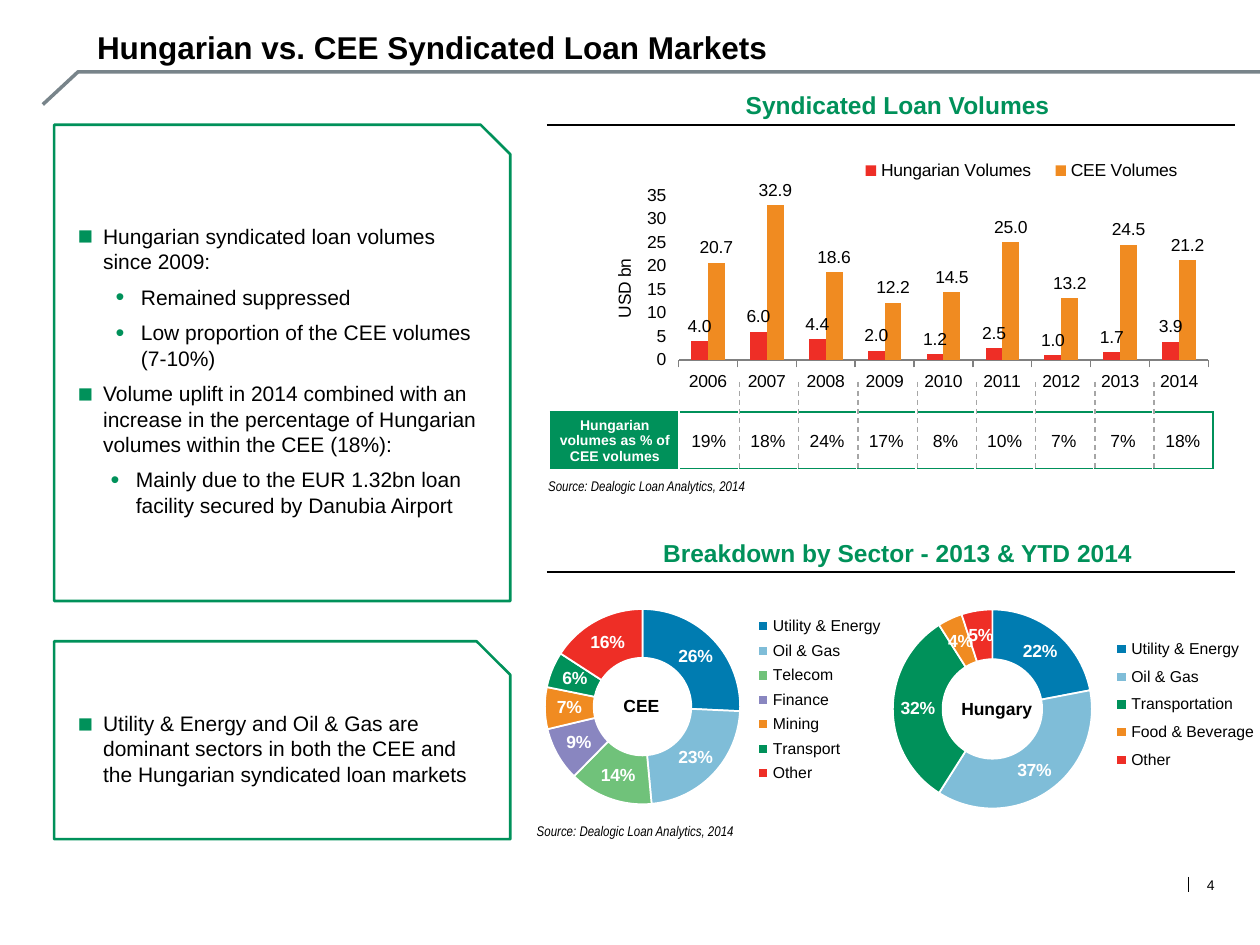
from dataclasses import dataclass

from lxml.etree import SubElement
from pptx import Presentation
from pptx.chart.data import CategoryChartData
from pptx.dml.color import RGBColor
from pptx.enum.chart import XL_CHART_TYPE as ChartType
from pptx.enum.chart import XL_LABEL_POSITION as LabelPosition
from pptx.enum.chart import XL_LEGEND_POSITION as LegendPosition
from pptx.enum.chart import XL_TICK_MARK as TickMark
from pptx.enum.dml import MSO_LINE
from pptx.enum.shapes import MSO_CONNECTOR, MSO_SHAPE
from pptx.enum.text import MSO_ANCHOR, PP_ALIGN
from pptx.oxml import parse_xml
from pptx.oxml.ns import nsdecls, qn
from pptx.util import Inches, Pt

GREEN, BLACK, WHITE = "00915A", "000000", "FFFFFF"
RED, ORANGE, BLUE, SKY = "EE2E26", "F08B21", "007CB1", "7FBDD8"
SOURCE = "Source: Dealogic Loan Analytics, 2014"
Box = tuple[float, float, float, float]


@dataclass
class Bullet:
    text: str
    left: float = 0.29
    mark: str = "■"
    level: int = 1


@dataclass
class Doughnut:
    name: str
    box: Box
    plot: Box
    legend: Box
    name_box: Box
    sectors: list[tuple[str, int, str]]


def color(value: str) -> RGBColor:
    return RGBColor.from_string(value)


def set_font(font, size: float, value: str = BLACK, bold=False, italic=False, name="Arial") -> None:
    font.size, font.bold, font.italic, font.name = Pt(size), bold, italic, name
    font.color.rgb = color(value)


def set_frame(frame, margins: Box = (0, 0, 0, 0), anchor=MSO_ANCHOR.TOP) -> None:
    frame.word_wrap = True
    frame.vertical_anchor = anchor
    (frame.margin_left, frame.margin_top,
     frame.margin_right, frame.margin_bottom) = map(Inches, margins)


def add_run(paragraph, text: str, size: float, value: str = BLACK, align=PP_ALIGN.LEFT, **style) -> None:
    paragraph.alignment = align
    run = paragraph.add_run()
    run.text = text
    set_font(run.font, size, value, **style)


def add_text(slide, box: Box, text: str, size: float, value: str = BLACK, align=PP_ALIGN.LEFT,
             margins: Box = (0, 0, 0, 0), anchor=MSO_ANCHOR.TOP, **style):
    shape = slide.shapes.add_textbox(*map(Inches, box))
    set_frame(shape.text_frame, margins, anchor)
    paragraph = shape.text_frame.paragraphs[0]
    add_run(paragraph, text, size, value, align, **style)
    return paragraph


def add_line(slide, start: tuple[float, float], end: tuple[float, float],
             value: str = BLACK, width: float = 1, dash=None) -> None:
    line = slide.shapes.add_connector(MSO_CONNECTOR.STRAIGHT, *map(Inches, start + end))
    line.line.color.rgb, line.line.width = color(value), Pt(width)
    if dash:
        line.line.dash_style = dash
    SubElement(line._element.spPr, qn("a:effectLst"))


def add_heading(slide, top: float, text: str) -> None:
    paragraph = add_text(slide, (4.34, top, 5.47, 0.31), text, 14, GREEN, PP_ALIGN.CENTER,
                         (0, 0.02, 0, 0.02), MSO_ANCHOR.MIDDLE, bold=True)
    paragraph._p.get_or_add_pPr().set("indent", str(Inches(0.1)))
    add_line(slide, (4.34, top + 0.31), (9.8, top + 0.31))


def add_panel(slide, box: Box, snip: float, bullets: list[Bullet]) -> None:
    panel = slide.shapes.add_shape(MSO_SHAPE.SNIP_1_RECTANGLE, *map(Inches, box))
    panel.shadow.inherit = False
    panel.adjustments[0] = snip
    panel.fill.solid()
    panel.fill.fore_color.rgb = color(WHITE)
    panel.line.color.rgb, panel.line.width = color(GREEN), Pt(1.5)
    frame = panel.text_frame
    set_frame(frame, (0.1, 0.05, 0.1, 0.05), MSO_ANCHOR.MIDDLE)
    for index, bullet in enumerate(bullets):
        paragraph = frame.add_paragraph() if index else frame.paragraphs[0]
        paragraph.level = bullet.level
        properties = paragraph._p.get_or_add_pPr()
        properties.set("marL", str(Inches(bullet.left)))
        properties.set("indent", str(Inches(-0.2)))
        SubElement(SubElement(properties, qn("a:buClr")), qn("a:srgbClr"), val=GREEN)
        SubElement(properties, qn("a:buSzPct"), val="120000")
        SubElement(properties, qn("a:buFont"), typeface="Arial")
        SubElement(properties, qn("a:buChar"), char=bullet.mark)
        paragraph.space_after = Pt(6)
        add_run(paragraph, bullet.text, 12)


def manual_layout(box: Box, inner: bool):
    target = '<c:layoutTarget val="inner"/>' if inner else ""
    modes = "".join(f'<c:{axis}Mode val="edge"/>' for axis in "xy")
    sizes = "".join(f'<c:{key} val="{value}"/>' for key, value in zip("xywh", box))
    return parse_xml(f'<c:layout {nsdecls("c")}><c:manualLayout>{target}{modes}{sizes}'
                     "</c:manualLayout></c:layout>")


def add_chart(slide, kind, box: Box, data, size: float, position, plot: Box, legend: Box):
    chart = slide.shapes.add_chart(kind, *map(Inches, box), data).chart
    set_font(chart.font, size)
    chart.has_title = False
    chart.has_legend = True
    chart.legend.position = position
    chart.legend.include_in_layout = False
    set_font(chart.legend.font, size)
    area = chart._chartSpace.chart.plotArea
    for layout in area.findall(qn("c:layout")):
        area.remove(layout)
    area.insert(0, manual_layout(plot, True))
    legend_element = chart.legend._element
    for layout in legend_element.findall(qn("c:layout")):
        legend_element.remove(layout)
    legend_element.find(qn("c:legendPos")).addnext(manual_layout(legend, False))
    return chart


def add_volume_chart(slide) -> None:
    data = CategoryChartData(number_format="0.0")
    data.categories = [str(year) for year in range(2006, 2015)]
    data.add_series("Hungarian Volumes", [4.0, 6.0, 4.4, 2.0, 1.2, 2.5, 1.0, 1.7, 3.9])
    data.add_series("CEE Volumes", [20.7, 32.9, 18.6, 12.2, 14.5, 25.0, 13.2, 24.5, 21.2])
    chart = add_chart(slide, ChartType.COLUMN_CLUSTERED, (4.84, 1.14, 4.95, 1.97), data, 10,
                      LegendPosition.TOP, (0.11, 0.21, 0.85, 0.67), (0.38, 0.06, 0.56, 0.1))
    plot = chart.plots[0]
    plot.gap_width, plot.overlap, plot.vary_by_categories = 150, 0, False
    for series, value in zip(plot.series, (RED, ORANGE)):
        series.format.fill.solid()
        series.format.fill.fore_color.rgb = color(value)
        labels = series.data_labels
        labels.show_value, labels.position = True, LabelPosition.OUTSIDE_END
        labels.number_format, labels.number_format_is_linked = "0.0", False
        set_font(labels.font, 10)
    chart.category_axis.major_tick_mark = TickMark.OUTSIDE
    chart.category_axis.format.line.color.rgb = color("808080")
    axis = chart.value_axis
    axis.minimum_scale, axis.maximum_scale, axis.major_unit = 0, 35, 5
    axis.has_major_gridlines = False
    axis.major_tick_mark = TickMark.OUTSIDE
    axis.format.line.color.rgb = color(WHITE)
    axis.tick_labels.number_format, axis.tick_labels.number_format_is_linked = "#,##0", False
    title = axis.axis_title.text_frame
    title._txBody.bodyPr.set("rot", "-5400000")
    add_run(title.paragraphs[0], "USD bn", 10)


def add_doughnut(slide, spec_item: Doughnut) -> None:
    data = CategoryChartData()
    data.categories = [name for name, _, _ in spec_item.sectors]
    data.add_series("Series 1", [share for _, share, _ in spec_item.sectors])
    chart = add_chart(slide, ChartType.DOUGHNUT, spec_item.box, data, 9,
                      LegendPosition.RIGHT, spec_item.plot, spec_item.legend)
    series = chart.plots[0].series[0]
    for index, (_, _, value) in enumerate(spec_item.sectors):
        style = series.points[index].format
        style.fill.solid()
        style.fill.fore_color.rgb = color(value)
        style.line.color.rgb, style.line.width = color(WHITE), Pt(1)
    labels = series.data_labels
    labels.show_percentage, labels.show_value = True, False
    labels.number_format, labels.number_format_is_linked = "0%", False
    set_font(labels.font, 10, WHITE, bold=True)
    add_text(slide, spec_item.name_box, spec_item.name, 10, align=PP_ALIGN.CENTER,
             margins=(0.1, 0.05, 0.1, 0.05), bold=True)


def add_share_table(slide) -> None:
    texts = ["Hungarian volumes as % of CEE volumes",
             "19%", "18%", "24%", "17%", "8%", "10%", "7%", "7%", "18%"]
    table = slide.shapes.add_table(1, len(texts), *map(Inches, (4.37, 3.27, 5.28, 0.45))).table
    table.first_row = table.horz_banding = False
    table.rows[0].height = Inches(0.45)
    for index, text in enumerate(texts):
        header, last = index == 0, index == len(texts) - 1
        table.columns[index].width = Inches(1.02 if header else 0.48 if last else 0.47)
        cell = table.cell(0, index)
        cell.vertical_anchor = MSO_ANCHOR.MIDDLE
        cell.margin_left = cell.margin_top = cell.margin_right = Inches(0.01)
        cell.margin_bottom = 0
        sides = {"L": GREEN if header else WHITE, "R": GREEN if last else WHITE,
                 "T": GREEN, "B": GREEN}
        for side, value in sides.items():
            border = SubElement(cell._tc.get_or_add_tcPr(), qn(f"a:ln{side}"), w=str(Pt(1)))
            SubElement(SubElement(border, qn("a:solidFill")), qn("a:srgbClr"), val=value)
        cell.fill.solid()
        cell.fill.fore_color.rgb = color(GREEN if header else WHITE)
        add_run(cell.text_frame.paragraphs[0], text, 8 if header else 10,
                WHITE if header else BLACK, PP_ALIGN.CENTER, bold=header)
    # Year separators
    for index in range(8):
        x = 5.87 + 0.47 * index
        add_line(slide, (x, 3.03), (x, 3.74), "A6A6A6", 0.75, MSO_LINE.DASH)


def main() -> None:
    presentation = Presentation()
    presentation.slide_width, presentation.slide_height = Inches(10), Inches(7.5)
    slide = presentation.slides.add_slide(presentation.slide_layouts[5])

    # Title and its rule
    builder = slide.shapes.build_freeform(Inches(0.34), Inches(0.83))
    builder.add_line_segments([(Inches(0.62), Inches(0.57)), (Inches(10), Inches(0.57))], close=False)
    rule = builder.convert_to_shape()
    rule.shadow.inherit = False
    rule.fill.background()
    rule.line.color.rgb, rule.line.width = color("78848A"), Pt(2)
    title = slide.shapes.title
    title.left, title.top, title.width, title.height = map(Inches, (0.77, 0.22, 7.8, 0.31))
    set_frame(title.text_frame, anchor=MSO_ANCHOR.MIDDLE)
    add_run(title.text_frame.paragraphs[0], "Hungarian vs. CEE Syndicated Loan Markets", 18, bold=True)

    # Loan volumes
    add_heading(slide, 0.68, "Syndicated Loan Volumes")
    add_volume_chart(slide)
    add_share_table(slide)

    # Sector breakdown
    add_heading(slide, 4.23, "Breakdown by Sector - 2013 & YTD 2014")
    energy, oil = "Utility & Energy", "Oil & Gas"
    add_doughnut(slide, Doughnut(
        "Hungary", (6.96, 4.3, 3.16, 2.35), (0.04, 0.19, 0.5, 0.75), (0.57, 0.3, 0.41, 0.5),
        (7.28, 5.49, 1.26, 0.27),
        [(energy, 22, BLUE), (oil, 37, SKY), ("Transportation", 32, GREEN),
         ("Food & Beverage", 4, ORANGE), ("Other", 5, RED)]))
    add_doughnut(slide, Doughnut(
        "CEE", (3.84, 4.4, 3.23, 2.14), (0.15, 0.2, 0.48, 0.73), (0.65, 0.21, 0.35, 0.66),
        (4.5, 5.47, 1.18, 0.27),
        [(energy, 26, BLUE), (oil, 23, SKY), ("Telecom", 14, "70C27A"), ("Finance", 9, "8986C0"),
         ("Mining", 7, ORANGE), ("Transport", 6, GREEN), ("Other", 16, RED)]))
    for left, top in ((4.35, 3.79), (4.26, 6.53)):
        add_text(slide, (left, top, 4.01, 0.13), SOURCE, 8, italic=True, name="Arial Narrow")

    # Commentary
    add_panel(slide, (0.43, 0.99, 3.62, 3.78), 0.065, [
        Bullet("Hungarian syndicated loan volumes since 2009:"),
        Bullet("Remained suppressed", 0.59, "•", 2),
        Bullet("Low proportion of the CEE volumes (7-10%)", 0.59, "•", 2),
        Bullet("Volume uplift in 2014 combined with an increase in the percentage of "
               "Hungarian volumes within the CEE (18%):"),
        Bullet("Mainly due to the EUR 1.32bn loan facility secured by Danubia Airport", 0.55, "•")])
    add_panel(slide, (0.43, 5.09, 3.62, 1.57), 0.17, [
        Bullet("Utility & Energy and Oil & Gas are dominant sectors in both the CEE and "
               "the Hungarian syndicated loan markets")])

    # Page number
    add_line(slide, (9.43, 6.96), (9.43, 7.08), width=0.75)
    add_text(slide, (9.44, 6.9, 0.2, 0.24), "4", 8, align=PP_ALIGN.RIGHT, anchor=MSO_ANCHOR.MIDDLE)
    presentation.save("out.pptx")


if __name__ == "__main__":
    main()
